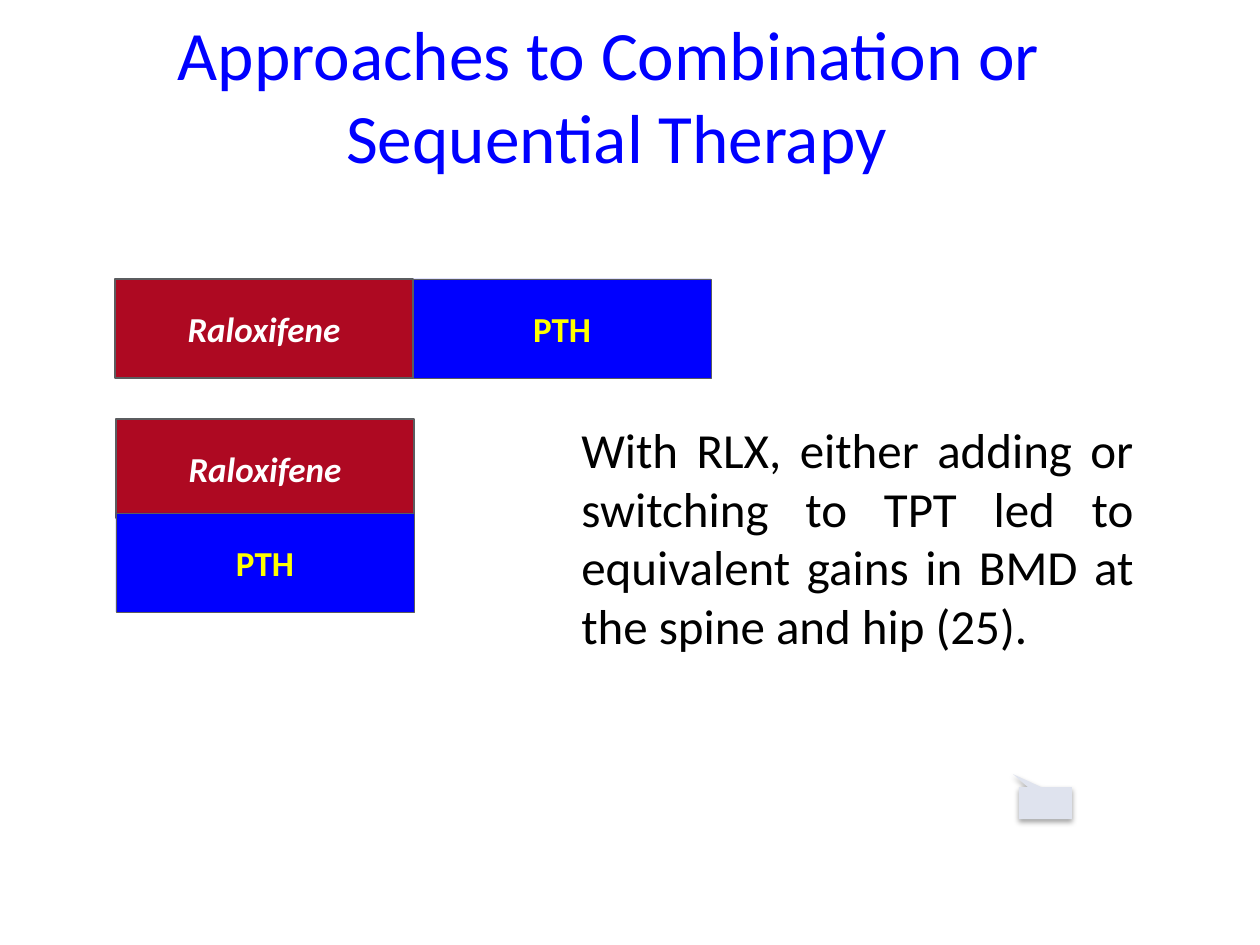
from dataclasses import dataclass

from lxml.etree import SubElement
from pptx import Presentation
from pptx.dml.color import RGBColor
from pptx.enum.shapes import MSO_SHAPE
from pptx.enum.text import MSO_ANCHOR, PP_ALIGN
from pptx.oxml.ns import qn
from pptx.util import Emu, Pt

PX = 914400 / 126


@dataclass(frozen=True)
class Theme:
    """Colours, font and type sizes of the slide."""
    font: str = "Calibri"
    blue: str = "0000FF"
    red: str = "AE0922"
    yellow: str = "FFFF00"
    white: str = "FFFFFF"
    black: str = "000000"
    outline: str = "5B5C5F"
    pale: str = "DFE3EE"
    title: float = 39.6
    body: float = 28
    label: float = 20


THEME = Theme()


def px(*lengths):
    """Turn pixel lengths into EMU."""
    return [Emu(round(length * PX)) for length in lengths]


def add_span(para, text, size, color, bold=False, italic=False):
    """Add one styled run to a paragraph."""
    span = para.add_run()
    span.text = text
    span.font.name = THEME.font
    span.font.size = Pt(size)
    span.font.bold = bold
    span.font.italic = italic
    span.font.color.rgb = RGBColor.from_string(color)


def add_text_area(page, area, align, anchor):
    """Add a wrapping text box and return its first paragraph."""
    frame = page.shapes.add_textbox(*px(*area)).text_frame
    frame.word_wrap = True
    frame.vertical_anchor = anchor
    para = frame.paragraphs[0]
    para.alignment = align
    return para


def add_title(page, area):
    """Place the two-line heading."""
    para = add_text_area(page, area, PP_ALIGN.CENTER, MSO_ANCHOR.MIDDLE)
    add_span(para, "Approaches to Combination or ", THEME.title, THEME.blue)
    para.add_line_break()
    add_span(para, "Sequential Therapy", THEME.title, THEME.blue)


def add_finding(page, area):
    """Place the justified statement of the result."""
    para = add_text_area(page, area, PP_ALIGN.JUSTIFY, MSO_ANCHOR.TOP)
    add_span(para, "With RLX, either adding or switching to TPT led to "
             "equivalent gains in BMD at the spine and hip (25).",
             THEME.body, THEME.black)


def add_drug_bar(group, area, name, fill, color, line_width, italic):
    """Place one labelled drug bar."""
    bar = group.shapes.add_shape(MSO_SHAPE.RECTANGLE, *px(*area))
    bar.shadow.inherit = False
    bar.fill.solid()
    bar.fill.fore_color.rgb = RGBColor.from_string(fill)
    bar.line.color.rgb = RGBColor.from_string(THEME.outline)
    bar.line.width = Pt(line_width)
    frame = bar.text_frame
    frame.word_wrap = False
    frame.vertical_anchor = MSO_ANCHOR.MIDDLE
    para = frame.paragraphs[0]
    para.alignment = PP_ALIGN.CENTER
    add_span(para, name, THEME.label, color, bold=True, italic=italic)


def add_raloxifene(group, area):
    """Place the red raloxifene bar."""
    add_drug_bar(group, area, "Raloxifene", THEME.red, THEME.white, 1, True)


def add_pth(group, area):
    """Place the blue PTH bar."""
    add_drug_bar(group, area, "PTH", THEME.blue, THEME.yellow, 0.25, False)


def add_sequential(page, left, top, width, height):
    """Place the two drugs one after the other."""
    group = page.shapes.add_group_shape()
    half = width // 2
    add_pth(group, (left + half, top, half, height))
    add_raloxifene(group, (left, top, half, height))


def add_combined(page, left, top, width, height):
    """Place the two drugs one above the other, slightly overlapping."""
    group = page.shapes.add_group_shape()
    bar_height = 99
    add_raloxifene(group, (left, top, width, bar_height))
    add_pth(group, (left, top + height - bar_height, width, bar_height))


def add_callout(page, area):
    """Place the small empty callout with its soft shadow."""
    box = page.shapes.add_shape(MSO_SHAPE.RECTANGULAR_CALLOUT, *px(*area))
    box.adjustments[0] = -0.61
    box.adjustments[1] = -0.9
    box.fill.solid()
    box.fill.fore_color.rgb = RGBColor.from_string(THEME.pale)
    box.line.fill.background()
    box.shadow.inherit = False
    effects = box.element.spPr.find(qn("a:effectLst"))
    shadow = SubElement(effects, qn("a:outerShdw"), blurRad=str(Pt(3.1)),
                        dist=str(Pt(1.8)), dir="5400000", rotWithShape="0")
    tint = SubElement(shadow, qn("a:srgbClr"), val=THEME.black)
    SubElement(tint, qn("a:alpha"), val="35000")


def main():
    """Build and save the deck."""
    deck = Presentation()
    deck.slide_width, deck.slide_height = px(1260, 945)
    page = deck.slides.add_slide(deck.slide_layouts[6])
    add_title(page, (39, 35, 1155, 118))
    add_finding(page, (569, 413, 577, 251))
    add_sequential(page, 115, 279, 596, 99)
    add_combined(page, 116, 419, 298, 193)
    add_callout(page, (1019, 787, 53, 32))
    deck.save("out.pptx")


if __name__ == "__main__":
    main()
